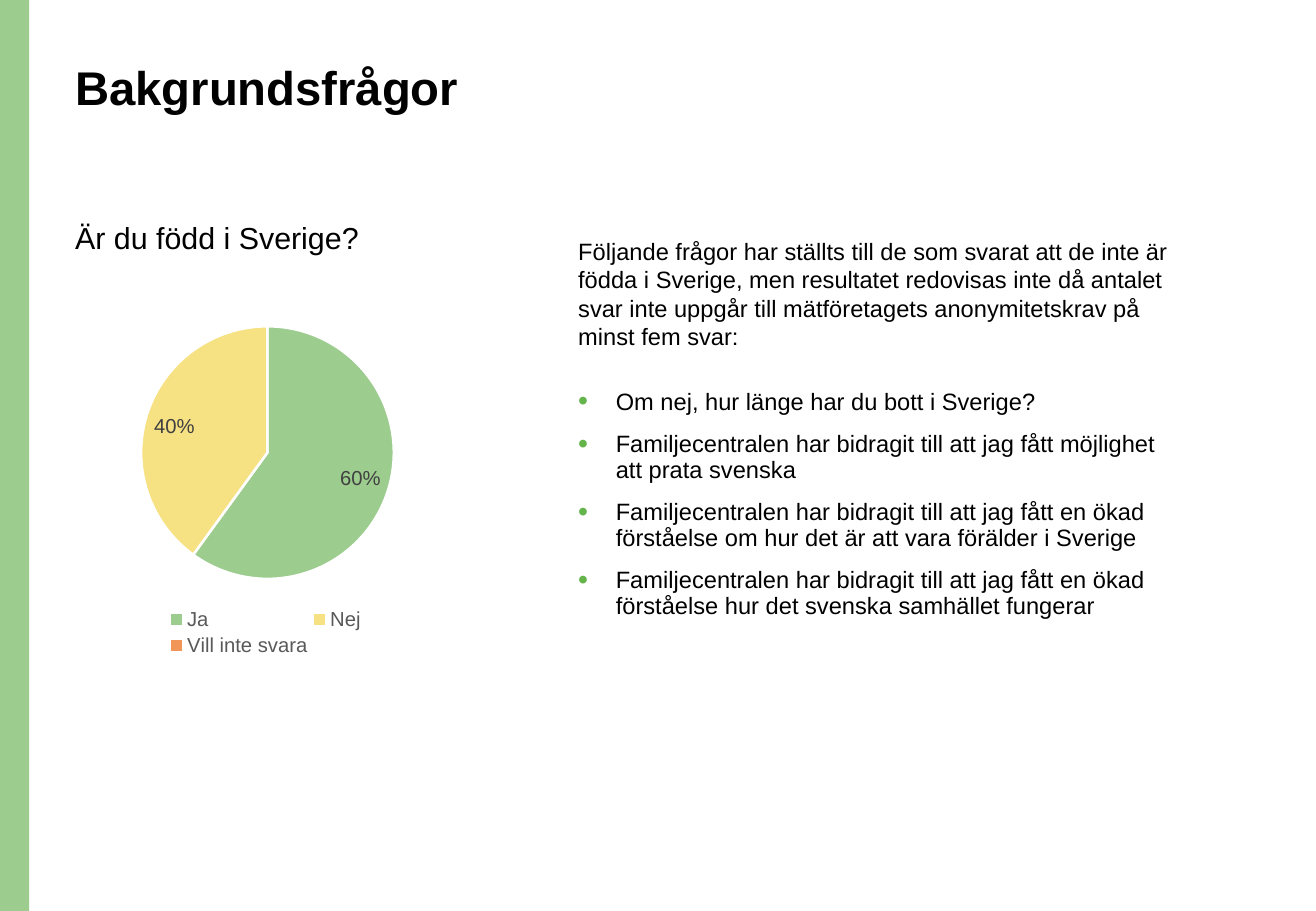
from lxml.etree import SubElement
from pptx import Presentation
from pptx.chart.data import CategoryChartData
from pptx.dml.color import RGBColor
from pptx.enum.chart import XL_CHART_TYPE, XL_LABEL_POSITION, XL_LEGEND_POSITION
from pptx.enum.shapes import MSO_SHAPE
from pptx.enum.text import MSO_ANCHOR, PP_ALIGN
from pptx.oxml.ns import qn
from pptx.util import Inches, Pt

FONT = "Arial"
COLORS = {
    "text": "000000", "band": "9DCC8F", "bullet": "64B34B", "white": "FFFFFF",
    "label": "404040", "legend": "595959",
}
ANSWERS = [("Ja", 0.6, "9DCC8F"), ("Nej", 0.4, "F6E183"), ("Vill inte svara", 0, "F29559")]
INTRO = ("Följande frågor har ställts till de som svarat att de inte är födda i Sverige, "
         "men resultatet redovisas inte då antalet svar inte uppgår till mätföretagets "
         "anonymitetskrav på minst fem svar:")
QUESTIONS = [
    "Om nej, hur länge har du bott i Sverige?",
    "Familjecentralen har bidragit till att jag fått möjlighet att prata svenska",
    "Familjecentralen har bidragit till att jag fått en ökad förståelse om hur det är "
    "att vara förälder i Sverige",
    "Familjecentralen har bidragit till att jag fått en ökad förståelse hur det svenska "
    "samhället fungerar",
]


def set_font(font, size, color):
    font.name, font.size = FONT, Pt(size)
    font.color.rgb = RGBColor.from_string(color)


def write_text(shape, lines, size=14, bold=False, line_spacing=None, before=0, bullets=False):
    frame = shape.text_frame
    frame.word_wrap = True
    frame.vertical_anchor = MSO_ANCHOR.TOP
    for index, line in enumerate(lines):
        paragraph = frame.add_paragraph() if index else frame.paragraphs[0]
        paragraph.alignment = PP_ALIGN.LEFT
        paragraph.line_spacing = line_spacing
        paragraph.space_before = Pt(before)
        run = paragraph.add_run()
        run.text = line
        set_font(run.font, size, COLORS["text"])
        run.font.bold = bold
        if bullets:
            add_bullet(paragraph)


def add_bullet(paragraph):
    properties = paragraph._p.get_or_add_pPr()
    properties.set("marL", str(Inches(0.31)))
    properties.set("indent", str(-Inches(0.31)))
    color = SubElement(properties, qn("a:buClr"))
    SubElement(color, qn("a:srgbClr"), val=COLORS["bullet"])
    SubElement(properties, qn("a:buSzPct"), val="120000")
    SubElement(properties, qn("a:buFont"), typeface=FONT)
    SubElement(properties, qn("a:buChar"), char="•")


def set_layout(layout, box, inner=False):
    """Place a chart part at fractions (x, y, width, height) of the chart."""
    manual = SubElement(layout, qn("c:manualLayout"))
    if inner:
        SubElement(manual, qn("c:layoutTarget"), val="inner")
    for tag in ("xMode", "yMode"):
        SubElement(manual, qn(f"c:{tag}"), val="edge")
    for tag, value in zip("xywh", box):
        SubElement(manual, qn(f"c:{tag}"), val=str(value))


def add_textbox(slide, box, lines, **text_format):
    shape = slide.shapes.add_textbox(*map(Inches, box))
    write_text(shape, lines, **text_format)


def add_band(slide, box):
    band = slide.shapes.add_shape(MSO_SHAPE.RECTANGLE, *map(Inches, box))
    band.shadow.inherit = False
    band.fill.solid()
    band.fill.fore_color.rgb = RGBColor.from_string(COLORS["band"])
    band.line.fill.background()


def add_title(slide, box, text):
    title = slide.shapes.title
    title.left, title.top, title.width, title.height = map(Inches, box)
    write_text(title, [text], size=28, bold=True, line_spacing=0.9)


def add_answer_chart(slide, box):
    data = CategoryChartData(number_format="0%")
    data.categories = [name for name, _, _ in ANSWERS]
    data.add_series("Series 1", [value for _, value, _ in ANSWERS])
    chart = slide.shapes.add_chart(XL_CHART_TYPE.PIE, *map(Inches, box), data).chart
    chart.has_title = False
    set_font(chart.font, 10, COLORS["text"])

    # Slices
    plot = chart.plots[0]
    plot.vary_by_categories = True
    for index, (_, _, color) in enumerate(ANSWERS):
        point_format = plot.series[0].points[index].format
        point_format.fill.solid()
        point_format.fill.fore_color.rgb = RGBColor.from_string(color)
        point_format.line.color.rgb = RGBColor.from_string(COLORS["white"])
        point_format.line.width = Pt(1.5)

    # Labels
    labels = plot.series[0].data_labels
    labels.show_value = True
    labels.number_format = '[<0.01]"";[>0.01]0%'
    labels.number_format_is_linked = False
    labels.position = XL_LABEL_POSITION.INSIDE_END
    set_font(labels.font, 12, COLORS["label"])

    # Legend
    chart.has_legend = True
    legend = chart.legend
    legend.position = XL_LEGEND_POSITION.BOTTOM
    legend.include_in_layout = False
    set_font(legend.font, 12, COLORS["legend"])

    # Placement of pie and legend
    plot_area = chart._chartSpace.chart.plotArea
    plot_layout = plot_area.find(qn("c:layout"))
    if plot_layout is None:
        plot_layout = SubElement(plot_area, qn("c:layout"))
        plot_area.insert(0, plot_layout)
    set_layout(plot_layout, (0.19, 0.05, 0.63, 0.71), inner=True)
    legend_layout = legend._element.find(qn("c:layout"))
    if legend_layout is None:
        legend_layout = SubElement(legend._element, qn("c:layout"))
        legend._element.find(qn("c:legendPos")).addnext(legend_layout)
    set_layout(legend_layout, (0.25, 0.83, 0.5, 0.16))


def build_question_slide(presentation):
    slide = presentation.slides.add_slide(presentation.slide_layouts[5])
    add_band(slide, (0, 0, 0.24, 7.5))
    add_title(slide, (0.52, 0.48, 9.34, 1.02), "Bakgrundsfrågor")
    add_textbox(slide, (0.52, 1.79, 4.58, 0.46), ["Är du född i Sverige?"],
                size=18, line_spacing=0.9)
    add_answer_chart(slide, (0.52, 2.54, 3.33, 2.93))
    add_textbox(slide, (4.66, 3.16, 5.03, 2.07), QUESTIONS,
                line_spacing=0.9, before=10, bullets=True)
    add_textbox(slide, (4.66, 1.9, 5.21, 1.04), [INTRO])


def main():
    presentation = Presentation()
    presentation.slide_width = Inches(10.83)
    presentation.slide_height = Inches(7.5)
    build_question_slide(presentation)
    presentation.save("out.pptx")


if __name__ == "__main__":
    main()
